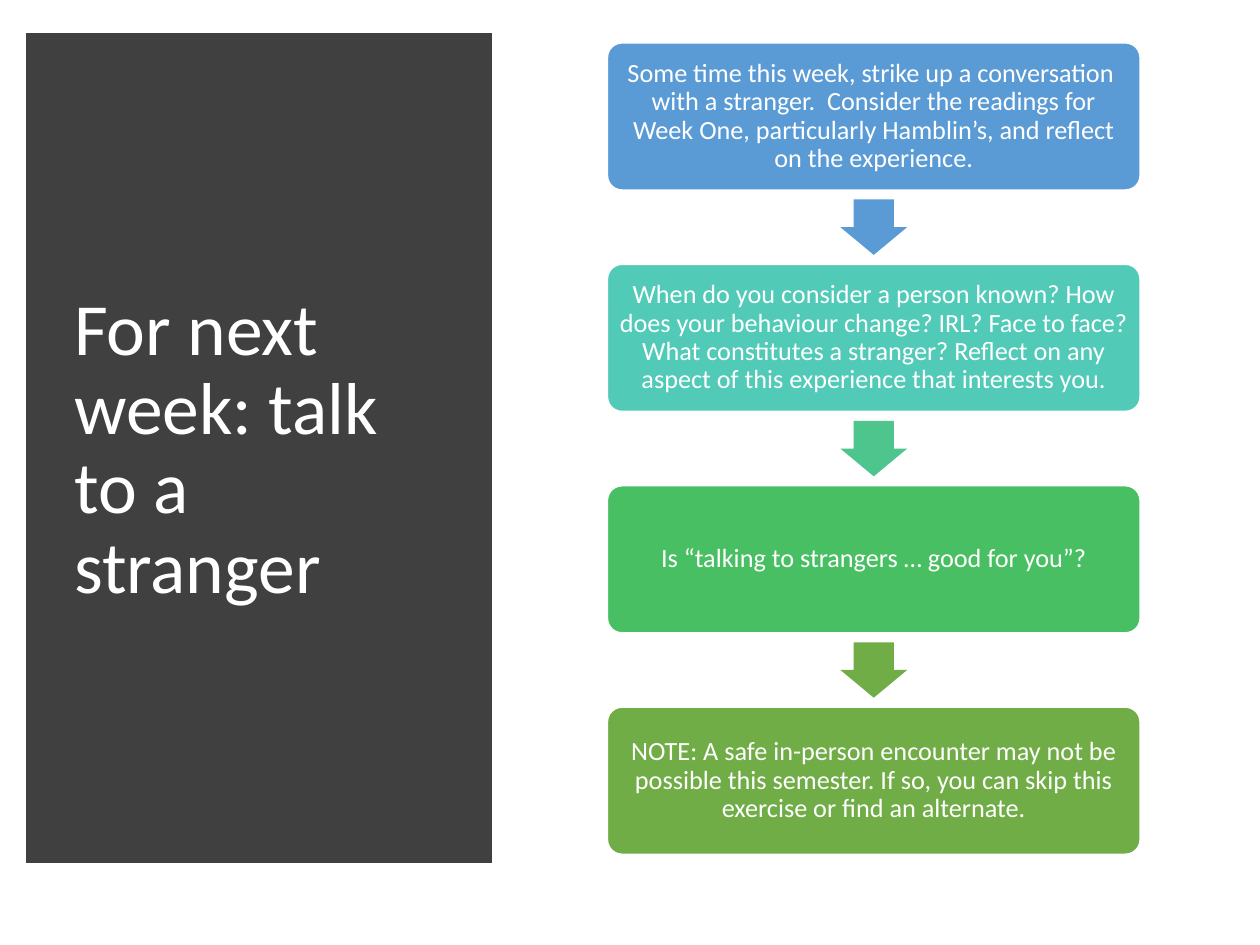
from dataclasses import dataclass

from lxml.etree import SubElement
from pptx import Presentation
from pptx.dml.color import RGBColor
from pptx.enum.shapes import MSO_SHAPE
from pptx.enum.text import MSO_ANCHOR, PP_ALIGN
from pptx.oxml.ns import qn
from pptx.util import Inches, Pt


@dataclass(frozen=True)
class Theme:
    font: str = "Calibri"
    white: str = "FFFFFF"
    dark: str = "404040"
    steps: tuple = ("5B9BD5", "52CAB8", "49BF64", "70AD47")
    arrows: tuple = ("5B9BD5", "4DC58D", "70AD47")
    title: int = 42
    body: int = 15


class Deck:
    """Draws on one slide; lengths are percent of its width and height."""

    def __init__(self, theme):
        self.theme = theme
        self.prs = Presentation()
        self.prs.slide_width, self.prs.slide_height = Inches(10), Inches(7.5)
        self.slide = self.prs.slides.add_slide(self.prs.slide_layouts[6])

    def place(self, x, y, w, h):
        wide, high = self.prs.slide_width / 100, self.prs.slide_height / 100
        return int(x * wide), int(y * high), int(w * wide), int(h * high)

    def shape(self, kind, box, fill, line=None, width=1, adjust=()):
        item = self.slide.shapes.add_shape(kind, *self.place(*box))
        item.shadow.inherit = False
        item.fill.solid()
        item.fill.fore_color.rgb = RGBColor.from_string(fill)
        if line:
            item.line.color.rgb = RGBColor.from_string(line)
            item.line.width = Pt(width)
        else:
            item.line.fill.background()
        for i, value in enumerate(adjust):
            item.adjustments[i] = value
        return item

    def label(self, item, text, size, align, inset):
        frame = item.text_frame
        frame.text = text
        frame.word_wrap = True
        frame.vertical_anchor = MSO_ANCHOR.MIDDLE
        frame.margin_left = frame.margin_right = Inches(inset)
        frame.margin_top = frame.margin_bottom = Inches(inset)
        para = frame.paragraphs[0]
        para.alignment, para.line_spacing = align, 0.9
        for run in para.runs:
            run.font.name, run.font.size = self.theme.font, Pt(size)
            run.font.color.rgb = RGBColor.from_string(self.theme.white)

    def panel(self, box):
        dark = self.theme.dark
        item = self.shape(MSO_SHAPE.RECTANGLE, box, dark, dark, 10)
        # Square outer corners for the thick outline
        line = item.element.spPr.find(qn("a:ln"))
        SubElement(line, qn("a:miter"), lim="800000")

    def title(self, box, text):
        item = self.slide.shapes.add_textbox(*self.place(*box))
        self.label(item, text, self.theme.title, PP_ALIGN.LEFT, 0.1)

    def step(self, box, text, fill):
        item = self.shape(MSO_SHAPE.ROUNDED_RECTANGLE, box, fill,
                          self.theme.white, adjust=(0.1,))
        self.label(item, text, self.theme.body, PP_ALIGN.CENTER, 0.06)

    def arrow(self, box, fill):
        self.shape(MSO_SHAPE.DOWN_ARROW, box, fill, adjust=(0.6, 0.5))


STEPS = (
    "Some time this week, strike up a conversation  with a stranger.  "
    "Consider the readings for Week One, particularly Hamblin’s, and reflect "
    "on the experience.",
    "When do you consider a person known? How does your behaviour change? "
    "IRL? Face to face? What constitutes a stranger? Reflect on any aspect "
    "of this experience that interests you.",
    "Is “talking to strangers … good for you”?",
    "NOTE: A safe in-person encounter may not be possible this semester. "
    "If so, you can skip this exercise or find an alternate.",
)


def main():
    theme = Theme()
    deck = Deck(theme)

    # Title panel
    deck.panel((2.8, 4.4, 35.6, 86))
    deck.title((4.9, 9.33, 31.2, 76.67), "For next week: talk to a stranger")

    # Steps, evenly spaced down the right side
    left, top, wide, high, pitch = 48.2, 4.53, 42.3, 15.6, 23.43
    for i, (text, fill) in enumerate(zip(STEPS, theme.steps)):
        deck.step((left, top + i * pitch, wide, high), text, fill)

    # Arrows, centred in the gaps between steps
    span, tall = 5.3, 5.87
    mid = left + (wide - span) / 2
    drop = top + high + (pitch - high - tall) / 2
    for i, fill in enumerate(theme.arrows):
        deck.arrow((mid, drop + i * pitch, span, tall), fill)

    deck.prs.save("out.pptx")


if __name__ == "__main__":
    main()
